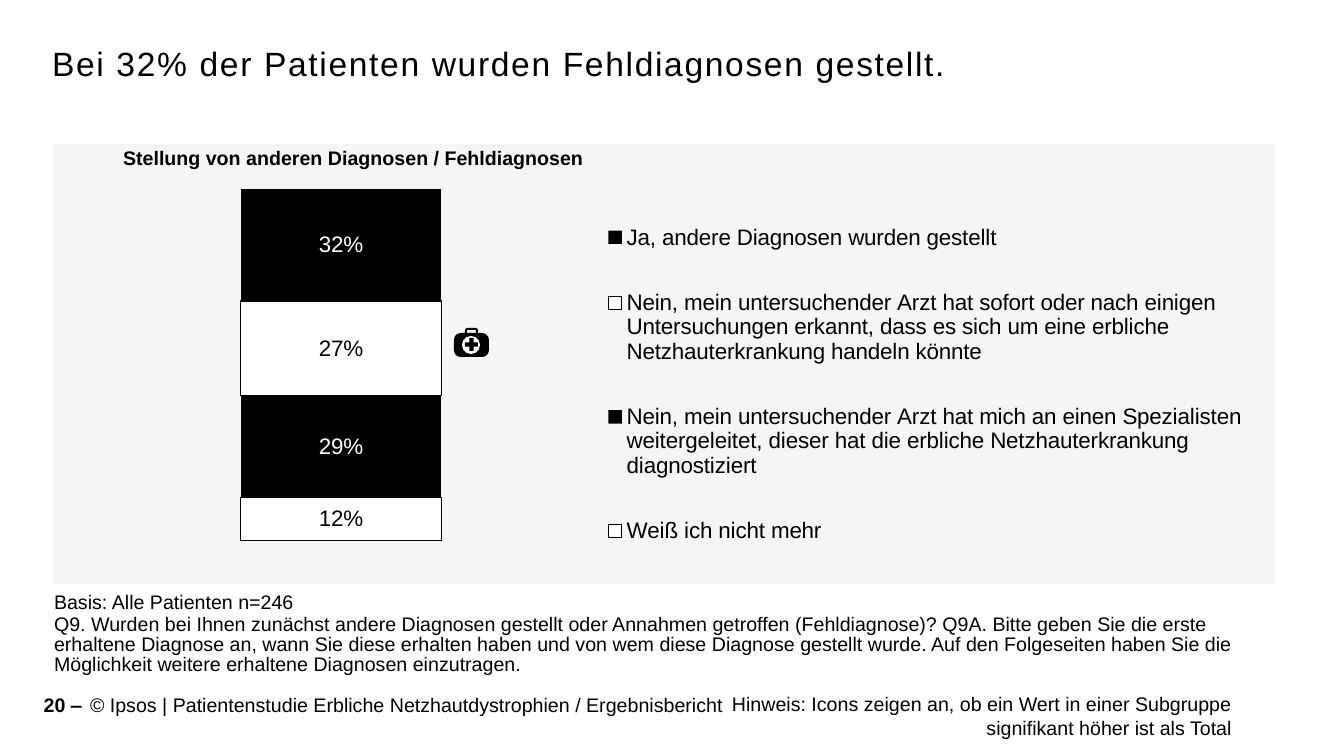
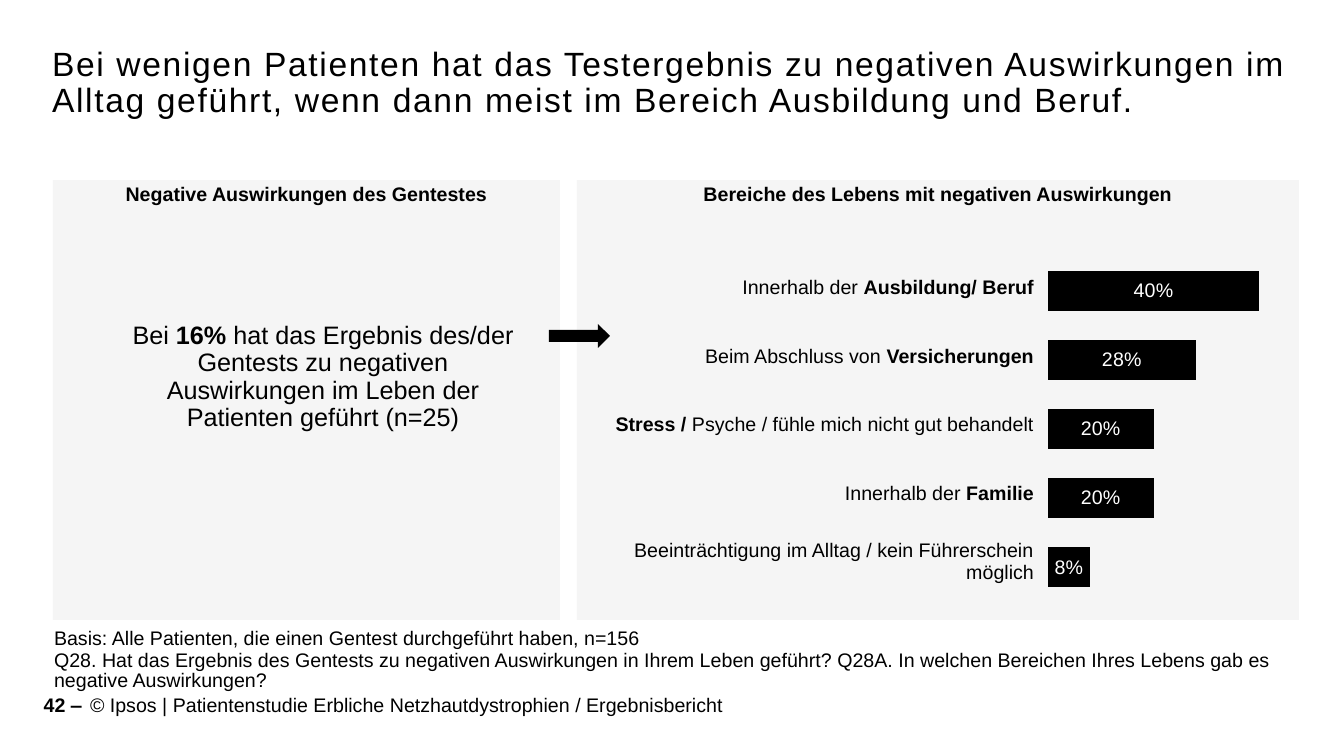
from lxml import etree
from pptx import Presentation
from pptx.chart.data import CategoryChartData
from pptx.dml.color import RGBColor
from pptx.enum import chart as charts, shapes, text
from pptx.oxml.ns import qn

EMU_PER_PX = 914400 / 100.8
BLACK = RGBColor(0x00, 0x00, 0x00)
WHITE = RGBColor(0xFF, 0xFF, 0xFF)
PANEL_GREY = RGBColor(0xF2, 0xF2, 0xF2)
FONT = "Arial"
NO_STYLE_TABLE = "{2D5ABB26-0587-4C30-8999-92F81FD0307C}"
COPYRIGHT = "© Ipsos | Patientenstudie Erbliche Netzhautdystrophien / Ergebnisbericht"
LEFT, CENTER, RIGHT = text.PP_ALIGN.LEFT, text.PP_ALIGN.CENTER, text.PP_ALIGN.RIGHT
TOP, MIDDLE = text.MSO_ANCHOR.TOP, text.MSO_ANCHOR.MIDDLE


def px(value):
    return round(value * EMU_PER_PX)


def box(*lengths):
    return [px(length) for length in lengths]


def style_font(font, size, color=BLACK, bold=None):
    font.name, font.size, font.bold = FONT, size * 12700, bold
    font.color.rgb = color


def style_frame(frame, insets, anchor=TOP):
    frame.word_wrap = True
    frame.auto_size = text.MSO_AUTO_SIZE.NONE
    frame.vertical_anchor = anchor
    (frame.margin_left, frame.margin_top,
     frame.margin_right, frame.margin_bottom) = box(*insets)


def write(paragraph, parts, size=14, align=LEFT, bold=None, spacing=None):
    """Fill a paragraph from a string or from (string, bold) pairs."""
    paragraph.alignment = align
    paragraph.line_spacing = spacing
    style_font(paragraph.font, size, bold=bold)
    if isinstance(parts, str):
        parts = [(parts, None)]
    for words, is_bold in parts:
        run = paragraph.add_run()
        run.text = words
        if is_bold:
            run.font.bold = True


def add_text(slide, place, parts, insets=(10, 5, 10, 5), anchor=TOP, **style):
    frame = slide.shapes.add_textbox(*box(*place)).text_frame
    style_frame(frame, insets, anchor)
    write(frame.paragraphs[0], parts, **style)
    return frame


def add_shape(parent, kind, place, color=BLACK):
    shape = parent.shapes.add_shape(kind, *box(*place))
    shape.shadow.inherit = False
    shape.fill.solid()
    shape.fill.fore_color.rgb = color
    shape.line.fill.background()
    return shape


def add_slide(presentation, title, title_height, number):
    """Add a slide with its title and footer."""
    slide = presentation.slides.add_slide(presentation.slide_layouts[5])
    shape = slide.shapes.title
    shape.left, shape.top, shape.width, shape.height = box(44, 42, 1255, title_height)
    style_frame(shape.text_frame, (8, 5, 8, 5))
    paragraph = shape.text_frame.paragraphs[0]
    write(paragraph, title, size=24, spacing=0.9)
    paragraph.font._element.set("spc", "120")
    footer = dict(insets=(0, 5, 0, 5), anchor=MIDDLE)
    add_text(slide, (90, 685, 1152, 40), COPYRIGHT, **footer)
    add_text(slide, (42, 685, 40, 40), f"{number} ‒", align=RIGHT, bold=True, **footer)
    return slide


def add_panel(slide, place):
    panel = add_shape(slide, shapes.MSO_SHAPE.RECTANGLE, place, PANEL_GREY)
    color = panel._element.spPr.find(qn("a:solidFill"))[0]
    etree.SubElement(color, qn("a:alpha"), val="70000")


def add_heading(slide, place, words):
    add_text(slide, place, words, align=CENTER, bold=True, spacing=0.9)


def add_source_note(slide, top, base, questions):
    frame = add_text(slide, (44, top, 1244, 41), base, insets=(10, 0, 1, 0), spacing=0.85)
    paragraph = frame.add_paragraph()
    write(paragraph, questions, spacing=0.85)
    paragraph.space_before = 2 * 12700


def set_layout(parent, index, inner=False, **fractions):
    """Give a plot area or legend a fixed place inside its chart."""
    for old in parent.findall(qn("c:layout")):
        parent.remove(old)
    layout = etree.Element(qn("c:layout"))
    manual = etree.SubElement(layout, qn("c:manualLayout"))
    if inner:
        etree.SubElement(manual, qn("c:layoutTarget"), val="inner")
    for name in "xy":
        etree.SubElement(manual, qn(f"c:{name}Mode"), val="edge")
    for name, value in fractions.items():
        etree.SubElement(manual, qn(f"c:{name}"), val=str(value))
    parent.insert(index, layout)


def add_percent_chart(slide, kind, place, categories, series, gap, plot_area):
    """Add a bar chart without axes; series holds (name, values)."""
    data = CategoryChartData(number_format="0%")
    data.categories = categories
    for name, values in series:
        data.add_series(name, values)
    chart = slide.shapes.add_chart(kind, *box(*place), data).chart
    chart.has_title = chart.has_legend = False
    style_font(chart.font, 10)
    chart.value_axis.has_major_gridlines = False
    chart.value_axis.minimum_scale = 0
    chart.category_axis.visible = chart.value_axis.visible = False
    plot = chart.plots[0]
    plot.gap_width = gap
    plot.vary_by_categories = False
    set_layout(plot._element.getparent(), 0, inner=True, **plot_area)
    return chart


def style_series(series, fill, label_color, label_size):
    series.invert_if_negative = False
    series.format.fill.solid()
    series.format.fill.fore_color.rgb = fill
    if fill == WHITE:
        series.format.line.color.rgb = BLACK
        series.format.line.width = 9525
    labels = series.data_labels
    labels.show_value = True
    labels.number_format, labels.number_format_is_linked = "0%", False
    labels.position = charts.XL_LABEL_POSITION.CENTER
    style_font(labels.font, label_size, label_color)


def add_diagnosis_chart(slide):
    answers = [
        ("Weiß ich nicht mehr", [0.12]),
        ("Nein, mein untersuchender Arzt hat mich an einen Spezialisten weitergeleitet, "
         "dieser hat die erbliche Netzhauterkrankung diagnostiziert", [0.29]),
        ("Nein, mein untersuchender Arzt hat sofort oder nach einigen Untersuchungen "
         "erkannt, dass es sich um eine erbliche Netzhauterkrankung handeln könnte", [0.27]),
        ("Ja, andere Diagnosen wurden gestellt", [0.32]),
    ]
    chart = add_percent_chart(
        slide, charts.XL_CHART_TYPE.COLUMN_STACKED_100, (51, 173, 1221, 598),
        ["1"], answers, 150, dict(x=0.032, y=0.026, w=0.411, h=0.588))
    chart.plots[0].overlap = 100
    for index, series in enumerate(chart.plots[0].series):
        fill, label_color = (BLACK, WHITE) if index % 2 else (WHITE, BLACK)
        style_series(series, fill, label_color, 16)
    chart.has_legend = True
    chart.legend.position = charts.XL_LEGEND_POSITION.RIGHT
    chart.legend.include_in_layout = False
    style_font(chart.legend.font, 16)
    set_layout(chart.legend._element, 1, x=0.446, y=0.018, w=0.54, h=0.67)


def add_doctor_bag(slide):
    kinds = shapes.MSO_SHAPE
    bag = slide.shapes.add_group_shape()
    handle = add_shape(bag, kinds.ROUND_2_SAME_RECTANGLE, (466, 329, 11, 8))
    handle.fill.background()
    handle.line.color.rgb = BLACK
    handle.line.width = px(2)
    body = add_shape(bag, kinds.ROUNDED_RECTANGLE, (454, 333, 35, 24))
    body.adjustments[0] = 0.28
    add_shape(bag, kinds.OVAL, (462, 336, 18, 18), WHITE)
    plus = add_shape(bag, kinds.CROSS, (465, 338, 13, 13))
    plus.adjustments[0] = 0.34


def add_label_table(slide, place, labels):
    """Add a one-column table of right-aligned labels without fill or borders."""
    table = slide.shapes.add_table(len(labels), 1, *box(*place)).table
    table.first_row = table.horz_banding = False
    table._tbl.tblPr.find(qn("a:tableStyleId")).text = NO_STYLE_TABLE
    for row, parts in enumerate(labels):
        cell = table.cell(row, 0)
        cell.fill.background()
        cell.vertical_anchor = MIDDLE
        (cell.margin_left, cell.margin_top,
         cell.margin_right, cell.margin_bottom) = box(1, 1, 1, 0)
        write(cell.text_frame.paragraphs[0], parts, align=RIGHT)


def build_misdiagnosis_slide(presentation):
    slide = add_slide(
        presentation, "Bei 32% der Patienten wurden Fehldiagnosen gestellt.", 46, 20)
    add_panel(slide, (53, 144, 1222, 440))
    add_diagnosis_chart(slide)
    add_heading(slide, (51, 144, 605, 30), "Stellung von anderen Diagnosen / Fehldiagnosen")
    add_source_note(
        slide, 593, "Basis: Alle Patienten n=246",
        "Q9. Wurden bei Ihnen zunächst andere Diagnosen gestellt oder Annahmen getroffen "
        "(Fehldiagnose)? Q9A. Bitte geben Sie die erste erhaltene Diagnose an, wann Sie diese "
        "erhalten haben und von wem diese Diagnose gestellt wurde. Auf den Folgeseiten haben "
        "Sie die Möglichkeit weitere erhaltene Diagnosen einzutragen.")
    add_doctor_bag(slide)
    add_text(
        slide, (636, 687, 606, 57),
        "Hinweis: Icons zeigen an, ob ein Wert in einer Subgruppe signifikant höher ist als Total",
        align=RIGHT)


def build_impact_slide(presentation):
    slide = add_slide(
        presentation,
        "Bei wenigen Patienten hat das Testergebnis zu negativen Auswirkungen im Alltag "
        "geführt, wenn dann meist im Bereich Ausbildung und Beruf.", 84, 42)
    for left, width, heading in (
            (53, 507, "Negative Auswirkungen des Gentestes"),
            (577, 722, "Bereiche des Lebens mit negativen Auswirkungen")):
        add_panel(slide, (left, 180, width, 440))
        add_heading(slide, (left, 180, width, 30), heading)
    add_source_note(
        slide, 629, "Basis: Alle Patienten, die einen Gentest durchgeführt haben, n=156",
        "Q28. Hat das Ergebnis des Gentests zu negativen Auswirkungen in Ihrem Leben geführt? "
        "Q28A. In welchen Bereichen Ihres Lebens gab es negative Auswirkungen?")
    areas = [
        ([("Innerhalb der ", False), ("Ausbildung/ Beruf", True)], 0.4),
        ([("Beim Abschluss von ", False), ("Versicherungen", True)], 0.28),
        ([("Stress / ", True), ("Psyche / fühle mich nicht gut behandelt", False)], 0.2),
        ([("Innerhalb der ", False), ("Familie", True)], 0.2),
        ("Beeinträchtigung im Alltag / kein Führerschein möglich", 0.08),
    ]
    labels, shares = zip(*areas)
    chart = add_percent_chart(
        slide, charts.XL_CHART_TYPE.BAR_CLUSTERED, (751, 236, 536, 376),
        ["1", "2", "3", "4", "5"], [("Series 1", shares)], 75,
        dict(x=0.554, y=0.054, w=0.444, h=0.919))
    chart.value_axis.maximum_scale = 0.45
    chart.category_axis.reverse_order = True
    style_series(chart.plots[0].series[0], BLACK, WHITE, 14)
    add_label_table(slide, (592, 253, 443, 343), labels)
    add_text(
        slide, (109, 318, 428, 150),
        [("Bei", False), (" 16% ", True),
         ("hat das Ergebnis des/der Gentests zu negativen Auswirkungen im Leben der "
          "Patienten geführt (n=25)", False)],
        size=18, align=CENTER, spacing=0.9)
    add_shape(slide, shapes.MSO_SHAPE.RIGHT_ARROW, (549, 324, 61, 24))


def main():
    presentation = Presentation()
    presentation.slide_width, presentation.slide_height = box(1344, 756)
    build_misdiagnosis_slide(presentation)
    build_impact_slide(presentation)
    presentation.save("out.pptx")


if __name__ == "__main__":
    main()
